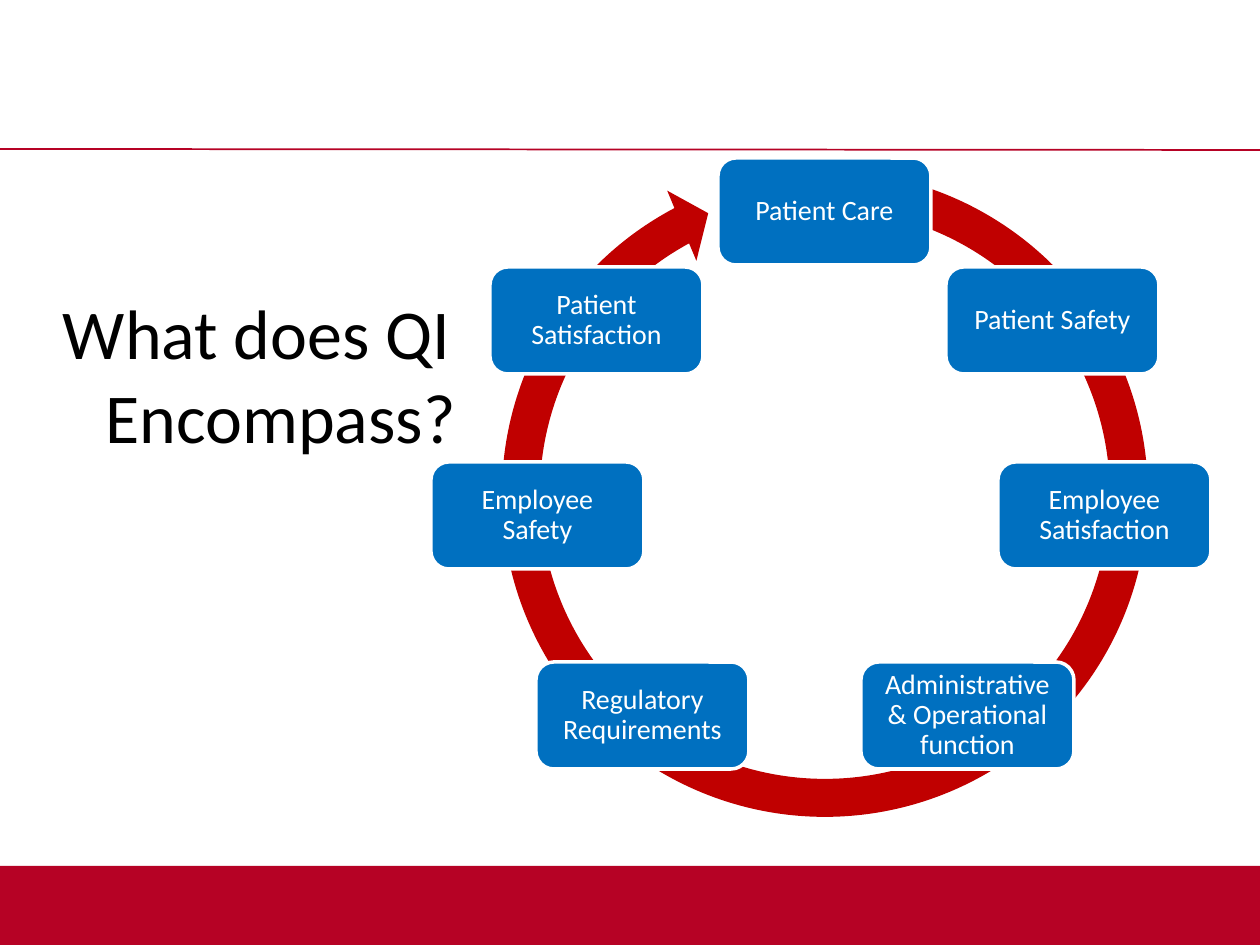
from lxml import etree
from pptx import Presentation
from pptx.dml.color import RGBColor
from pptx.enum.shapes import MSO_CONNECTOR, MSO_SHAPE
from pptx.enum.text import MSO_ANCHOR, PP_ALIGN
from pptx.oxml.ns import qn
from pptx.util import Pt

PX = 914400 // 126
RECTANGLE = MSO_SHAPE.RECTANGLE
ROUNDED = MSO_SHAPE.ROUNDED_RECTANGLE
CIRCULAR_ARROW = MSO_SHAPE.CIRCULAR_ARROW
STRAIGHT = MSO_CONNECTOR.STRAIGHT
MIDDLE = MSO_ANCHOR.MIDDLE
TOP = MSO_ANCHOR.TOP
CENTER = PP_ALIGN.CENTER

FONT = "Calibri"
COLORS = {"band": "B60225", "ring": "C00000", "node": "0070C0",
          "white": "FFFFFF", "black": "000000"}

PAGE_WIDTH, PAGE_HEIGHT = 1260, 945
BAND_TOP = 866
NODE_WIDTH, NODE_HEIGHT = 213, 107
RING_SIZE, RING_THICKNESS = 684, 38

# Clockwise from the top: label, left, top
NODES = [
    ("Patient Care", 718, 158),
    ("Patient Safety", 946, 267),
    ("Employee Satisfaction", 998, 462),
    ("Administrative & Operational function", 861, 662),
    ("Regulatory Requirements", 536, 662),
    ("Employee Safety", 431, 462),
    ("Patient Satisfaction", 490, 267),
]


def px(*lengths):
    return [length * PX for length in lengths]


def color(name):
    return RGBColor.from_string(COLORS[name])


def add_filled(page, preset, place, fill):
    shape = page.shapes.add_shape(preset, *px(*place))
    shape.shadow.inherit = False
    shape.fill.solid()
    shape.fill.fore_color.rgb = color(fill)
    shape.line.fill.background()
    return shape


def add_rule(page, start, end):
    rule = page.shapes.add_connector(STRAIGHT, *px(*start, *end))
    rule.line.color.rgb = color("band")
    rule.line.width = Pt(1)
    etree.SubElement(rule._element.spPr, qn("a:effectLst"))


def set_text(box, text, size, ink, insets, anchor):
    frame = box.text_frame
    frame.word_wrap = True
    frame.vertical_anchor = anchor
    (frame.margin_left, frame.margin_top,
     frame.margin_right, frame.margin_bottom) = px(*insets)
    para = frame.paragraphs[0]
    para.text = text
    para.alignment = CENTER
    para.font.name = FONT
    para.font.size = Pt(size)
    para.font.color.rgb = color(ink)
    return para


def add_heading(page, text, place):
    box = page.shapes.add_textbox(*px(*place))
    para = set_text(box, text, 40, "black", (0, 6, 13, 6), TOP)
    # Hanging indent
    hang = 48 * PX
    properties = para._p.get_or_add_pPr()
    properties.set("marL", str(hang))
    properties.set("indent", str(-hang))


def add_ring(page, left, top):
    ring = add_filled(page, CIRCULAR_ARROW, (left, top, RING_SIZE, RING_SIZE), "ring")
    thickness = RING_THICKNESS / RING_SIZE
    # Band, head angle, end angle, start angle, head width
    for index, value in enumerate((thickness, 3.31, 145.15, 169.51, thickness)):
        ring.adjustments[index] = value


def add_node(page, label, left, top):
    node = add_filled(page, ROUNDED, (left, top, NODE_WIDTH, NODE_HEIGHT), "node")
    node.line.color.rgb = color("white")
    node.line.width = Pt(2)
    para = set_text(node, label, 16, "white", (9, 9, 9, 9), MIDDLE)
    para.line_spacing = 0.9


def main():
    deck = Presentation()
    deck.slide_width, deck.slide_height = px(PAGE_WIDTH, PAGE_HEIGHT)
    page = deck.slides.add_slide(deck.slide_layouts[6])

    # Page frame
    add_filled(page, RECTANGLE,
               (0, BAND_TOP, PAGE_WIDTH, PAGE_HEIGHT - BAND_TOP), "band")
    add_rule(page, (0, 149), (PAGE_WIDTH, 150))

    # Heading
    add_heading(page, "What does QI Encompass?", (32, 284, 462, 168))

    # Cycle
    add_ring(page, 483, 152)
    for label, left, top in NODES:
        add_node(page, label, left, top)

    deck.save("out.pptx")


if __name__ == "__main__":
    main()
